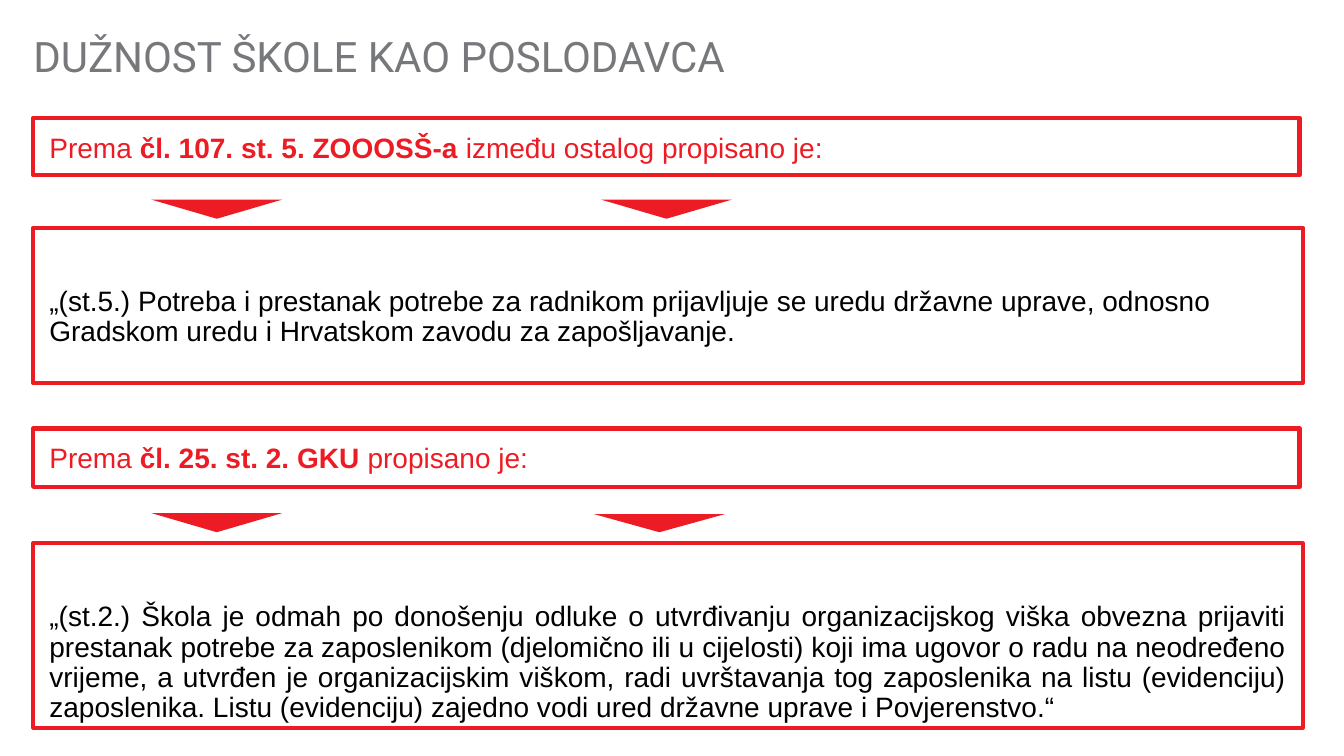
from dataclasses import dataclass

from pptx import Presentation
from pptx.dml.color import RGBColor
from pptx.enum.shapes import MSO_SHAPE
from pptx.enum.text import MSO_ANCHOR, MSO_AUTO_SIZE, PP_ALIGN
from pptx.util import Inches, Pt

TITLE = "DUŽNOST ŠKOLE KAO POSLODAVCA"

# Each rule: heading runs (text, bold), quoted text, alignment,
# heading (top, height), quote (top, height), arrows (left, top, height)
RULES = [
    {
        "head": [("Prema ", False), ("čl. 107. st. 5. ZOOOSŠ-a ", True),
                 ("između ostalog propisano je:", False)],
        "quote": "„(st.5.) Potreba i prestanak potrebe za radnikom prijavljuje se "
                 "uredu državne uprave, odnosno Gradskom uredu i Hrvatskom zavodu "
                 "za zapošljavanje.",
        "align": PP_ALIGN.LEFT,
        "head_box": (1.17, 0.57),
        "quote_box": (2.26, 1.54),
        "arrows": [(1.5, 1.98, 0.19), (5.96, 1.98, 0.19)],
    },
    {
        "head": [("Prema ", False), ("čl. 25. st. 2. GKU ", True),
                 ("propisano je:", False)],
        "quote": "„(st.2.) Škola je odmah po donošenju odluke o utvrđivanju "
                 "organizacijskog viška obvezna prijaviti prestanak potrebe za "
                 "zaposlenikom (djelomično ili u cijelosti) koji ima ugovor o radu "
                 "na neodređeno vrijeme, a utvrđen je organizacijskim viškom, radi "
                 "uvrštavanja tog zaposlenika na listu (evidenciju) zaposlenika. "
                 "Listu (evidenciju) zajedno vodi ured državne uprave i "
                 "Povjerenstvo.“",
        "align": PP_ALIGN.JUSTIFY,
        "head_box": (4.25, 0.58),
        "quote_box": (5.39, 1.83),
        "arrows": [(1.5, 5.09, 0.19), (5.89, 5.1, 0.18)],
    },
]


@dataclass(frozen=True)
class Theme:
    red: RGBColor = RGBColor(0xED, 0x1C, 0x24)
    gray: RGBColor = RGBColor(0x77, 0x78, 0x7B)
    black: RGBColor = RGBColor(0, 0, 0)
    white: RGBColor = RGBColor(0xFF, 0xFF, 0xFF)
    title_font: str = "Roboto"
    body_font: str = "Arial"
    title_size: Pt = Pt(30)
    body_size: Pt = Pt(20)
    border: Pt = Pt(3)
    spacing: float = 0.9


THEME = Theme()
LEFT = 0.33
HEAD_WIDTH, QUOTE_WIDTH = 12.56, 12.59
HEAD_INSET, QUOTE_INSET = 0.16, 0.59
ARROW_WIDTH = 1.3


def set_frame(frame, left, top, right, bottom):
    """Anchor the text at the top, wrap it and set its insets in inches."""
    frame.word_wrap = True
    frame.vertical_anchor = MSO_ANCHOR.TOP
    frame.margin_left, frame.margin_top = Inches(left), Inches(top)
    frame.margin_right, frame.margin_bottom = Inches(right), Inches(bottom)


def set_para(para, font, size, color, align=PP_ALIGN.LEFT):
    para.alignment = align
    para.line_spacing = THEME.spacing
    para.font.name, para.font.size = font, size
    para.font.color.rgb = color


def add_title(slide):
    title = slide.shapes.title
    title.left, title.top = Inches(LEFT), Inches(0.36)
    title.width, title.height = Inches(12.64), Inches(0.45)
    frame = title.text_frame
    frame.text = TITLE
    set_frame(frame, 0, 0, 0, 0)
    frame.auto_size = MSO_AUTO_SIZE.SHAPE_TO_FIT_TEXT
    set_para(frame.paragraphs[0], THEME.title_font, THEME.title_size, THEME.gray)


def add_box(slide, place, width, inset, runs, color, align=PP_ALIGN.LEFT):
    """Draw a red-bordered box holding one paragraph of (text, bold) runs."""
    top, height = place
    box = slide.shapes.add_shape(MSO_SHAPE.RECTANGLE, Inches(LEFT), Inches(top),
                                 Inches(width), Inches(height))
    box.shadow.inherit = False
    box.fill.solid()
    box.fill.fore_color.rgb = THEME.white
    box.line.color.rgb = THEME.red
    box.line.width = THEME.border
    set_frame(box.text_frame, 0.16, inset, 0.16, 0.05)
    para = box.text_frame.paragraphs[0]
    set_para(para, THEME.body_font, THEME.body_size, color, align)
    for text, bold in runs:
        run = para.add_run()
        run.text = text
        run.font.bold = bold


def add_arrow(slide, left, top, height):
    arrow = slide.shapes.add_shape(MSO_SHAPE.ISOSCELES_TRIANGLE, Inches(left),
                                   Inches(top), Inches(ARROW_WIDTH), Inches(height))
    arrow.rotation = 180
    arrow.shadow.inherit = False
    arrow.fill.solid()
    arrow.fill.fore_color.rgb = THEME.red
    arrow.line.fill.background()


def main():
    deck = Presentation()
    deck.slide_width, deck.slide_height = Inches(13.33), Inches(7.5)
    slide = deck.slides.add_slide(deck.slide_layouts.get_by_name("Title Only"))
    add_title(slide)
    for rule in RULES:
        add_box(slide, rule["head_box"], HEAD_WIDTH, HEAD_INSET,
                rule["head"], THEME.red)
        for arrow in rule["arrows"]:
            add_arrow(slide, *arrow)
        add_box(slide, rule["quote_box"], QUOTE_WIDTH, QUOTE_INSET,
                [(rule["quote"], False)], THEME.black, rule["align"])
    deck.save("out.pptx")


if __name__ == "__main__":
    main()
